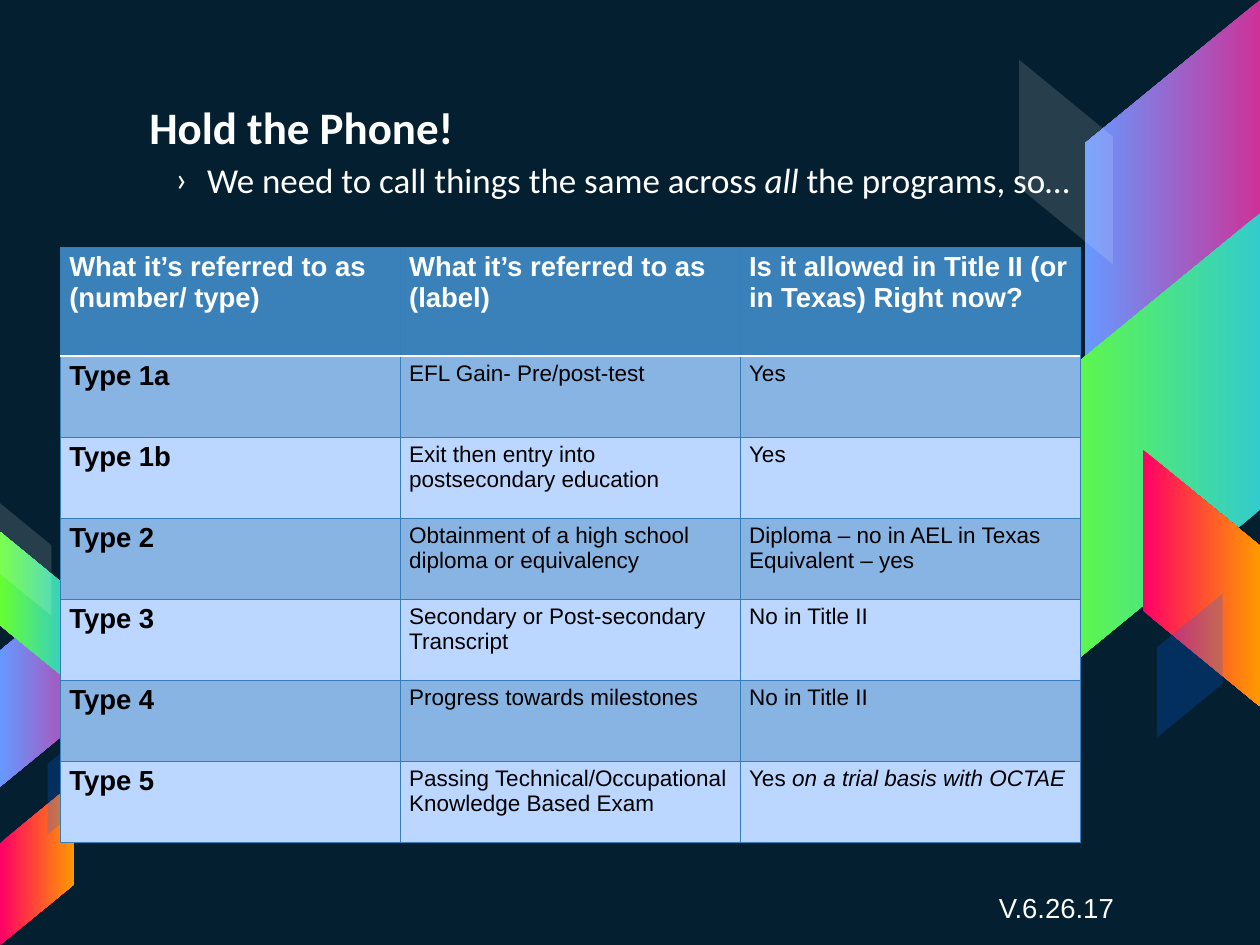
from lxml.etree import SubElement
from pptx import Presentation
from pptx.dml.color import RGBColor
from pptx.enum.shapes import MSO_SHAPE
from pptx.enum.text import MSO_ANCHOR, PP_ALIGN
from pptx.oxml import parse_xml
from pptx.oxml.ns import nsdecls, qn
from pptx.util import Inches, Pt

NAVY = RGBColor(0x04, 0x1F, 0x30)
WHITE = RGBColor(0xFF, 0xFF, 0xFF)
BLACK = RGBColor(0x00, 0x00, 0x00)
HEADER_BLUE = RGBColor(0x3A, 0x81, 0xBA)
DARK_BAND = RGBColor(0x87, 0xB4, 0xE3)
LIGHT_BAND = RGBColor(0xBB, 0xD6, 0xFF)
BORDER_BLUE = RGBColor(0x36, 0x7E, 0xB9)
GLASS_BLUE = RGBColor(0x00, 0x66, 0xFF)
PURPLE = (RGBColor(0xCC, 0x33, 0x99), RGBColor(0x66, 0x99, 0xFF))
GREEN = (RGBColor(0x33, 0xCC, 0xCC), RGBColor(0x66, 0xFF, 0x33))
ORANGE = (RGBColor(0xFF, 0x00, 0x66), RGBColor(0xFF, 0x99, 0x00))

# Asterisks enclose italic words.
TITLE = "Hold the Phone!"
BULLET = "We need to call things the same across *all* the programs, so…"
VERSION = "V.6.26.17"
ROWS = [
    ("What it’s referred to as (number/ type)", "What it’s referred to as (label)",
     "Is it allowed in Title II (or in Texas) Right now?"),
    ("Type 1a", "EFL Gain- Pre/post-test", "Yes"),
    ("Type 1b", "Exit then entry into postsecondary education", "Yes"),
    ("Type 2", "Obtainment of a high school diploma or equivalency",
     "Diploma – no in AEL in Texas\nEquivalent – yes"),
    ("Type 3", "Secondary or Post-secondary Transcript", "No in Title II"),
    ("Type 4", "Progress towards milestones", "No in Title II"),
    ("Type 5", "Passing Technical/Occupational Knowledge Based Exam",
     "Yes *on a trial basis with OCTAE*"),
]
HEADER_HEIGHT, ROW_HEIGHT = 1.21, 0.9

# left, top, width, height, rotation, flipped; then gradient pair, or colour and opacity %
RIBBONS = [
    ((10.91, 1.15, 4.24, 1.94), 90, True, PURPLE),
    ((10.17, 3.8, 5.26, 2.4), 90, True, GREEN),
    ((11.92, 5.77, 2.85, 1.3), 270, False, ORANGE),
    ((10.71, 1.28, 2.27, 1.04), 270, False, (WHITE, 14)),
    ((12.42, 7.03, 1.6, 0.73), 270, True, (GLASS_BLUE, 23)),
    ((-0.66, 6.98, 2.42, 1.11), 90, True, PURPLE),
    ((-0.45, 6.36, 1.65, 0.75), 90, False, GREEN),
    ((-0.49, 9.18, 1.81, 0.83), 270, True, ORANGE),
    ((-0.34, 5.93, 1.25, 0.57), 270, False, (WHITE, 14)),
    ((0.19, 8.36, 1.25, 0.57), 270, True, (GLASS_BLUE, 23)),
]


def write(text_frame, text, size, font="Arial", color=WHITE, bold=False):
    """Fill the first paragraph; *…* marks italics and a newline a line break."""
    paragraph = text_frame.paragraphs[0]
    paragraph.alignment = PP_ALIGN.LEFT
    for part_index, part in enumerate(text.split("*")):
        for line_index, line in enumerate(part.split("\n")):
            if line_index:
                paragraph.add_line_break()
            if not line:
                continue
            run = paragraph.add_run()
            run.text = line
            run.font.size = Pt(size)
            run.font.name = font
            run.font.color.rgb = color
            run.font.bold = bold
            run.font.italic = part_index % 2 == 1
    return paragraph


def set_margins(text_frame, side, top):
    text_frame.margin_left = text_frame.margin_right = Inches(side)
    text_frame.margin_top = text_frame.margin_bottom = Inches(top)
    text_frame.vertical_anchor = MSO_ANCHOR.TOP


def add_ribbon(slide, box, rotation, flipped, paint):
    shape = slide.shapes.add_shape(MSO_SHAPE.PARALLELOGRAM, *map(Inches, box))
    shape.adjustments[0] = 0.819
    shape.rotation = rotation
    shape.shadow.inherit = False
    shape.line.fill.background()
    if flipped:
        shape.element.spPr.find(qn("a:xfrm")).set("flipH", "1")
    if isinstance(paint[1], RGBColor):
        shape.fill.gradient()
        shape.fill.gradient_angle = 270
        for stop, color in zip(shape.fill.gradient_stops, paint):
            stop.color.rgb = color
    else:
        color, opacity = paint
        shape.fill.solid()
        shape.fill.fore_color.rgb = color
        color_element = shape.element.spPr.find(qn("a:solidFill"))[0]
        SubElement(color_element, qn("a:alpha")).set("val", str(opacity * 1000))


def set_borders(cell, top, bottom):
    """Each border is a (colour, points) pair; the sides are thin blue."""
    thin = (BORDER_BLUE, 0.75)
    borders = (("lnL", thin), ("lnR", thin), ("lnT", top), ("lnB", bottom))
    properties = cell._tc.get_or_add_tcPr()
    for index, (tag, (color, points)) in enumerate(borders):
        properties.insert(index, parse_xml(
            f'<a:{tag} {nsdecls("a")} w="{Pt(points)}"><a:solidFill>'
            f'<a:srgbClr val="{color}"/></a:solidFill></a:{tag}>'))


def add_type_table(slide):
    height = HEADER_HEIGHT + ROW_HEIGHT * (len(ROWS) - 1)
    table = slide.shapes.add_table(len(ROWS), len(ROWS[0]), Inches(0.67), Inches(2.75),
                                   Inches(11.33), Inches(height)).table
    table.first_row = table.horz_banding = False
    thin, rule = (BORDER_BLUE, 0.75), (WHITE, 2)
    for row_index, texts in enumerate(ROWS):
        header = row_index == 0
        table.rows[row_index].height = Inches(HEADER_HEIGHT if header else ROW_HEIGHT)
        band = DARK_BAND if row_index % 2 else LIGHT_BAND
        for column_index, text in enumerate(texts):
            cell = table.cell(row_index, column_index)
            cell.fill.solid()
            cell.fill.fore_color.rgb = HEADER_BLUE if header else band
            set_borders(cell, rule if row_index == 1 else thin, rule if header else thin)
            strong = header or column_index == 0
            write(cell.text_frame, text, 22 if strong else 18,
                  color=WHITE if header else BLACK, bold=strong)


def add_bullet(slide):
    box = slide.shapes.add_textbox(Inches(1.67), Inches(1.58), Inches(10.58), Inches(0.9))
    box.text_frame.word_wrap = True
    set_margins(box.text_frame, 0.16, 0.18)
    properties = write(box.text_frame, BULLET, 28, font="Calibri")._p.get_or_add_pPr()
    properties.set("marL", str(Inches(0.47)))
    properties.set("indent", str(Inches(-0.35)))
    SubElement(SubElement(properties, qn("a:buClr")), qn("a:srgbClr")).set("val", str(WHITE))
    SubElement(properties, qn("a:buFont")).set("typeface", "Calibri")
    SubElement(properties, qn("a:buChar")).set("char", "›")


def main():
    presentation = Presentation()
    presentation.slide_width, presentation.slide_height = Inches(14), Inches(10.5)
    slide = presentation.slides.add_slide(presentation.slide_layouts[5])
    slide.background.fill.solid()
    slide.background.fill.fore_color.rgb = NAVY

    for ribbon in RIBBONS:
        add_ribbon(slide, *ribbon)

    title = slide.shapes.title
    title.left, title.top, title.width, title.height = map(Inches, (1.5, 0.92, 9.14, 0.8))
    set_margins(title.text_frame, 0.16, 0.19)
    write(title.text_frame, TITLE, 36, font="Calibri", bold=True)

    add_bullet(slide)
    add_type_table(slide)

    version = slide.shapes.add_textbox(Inches(11), Inches(9.85), Inches(1.52), Inches(0.47))
    version.text_frame.word_wrap = False
    write(version.text_frame, VERSION, 22)

    presentation.save("out.pptx")


if __name__ == "__main__":
    main()
